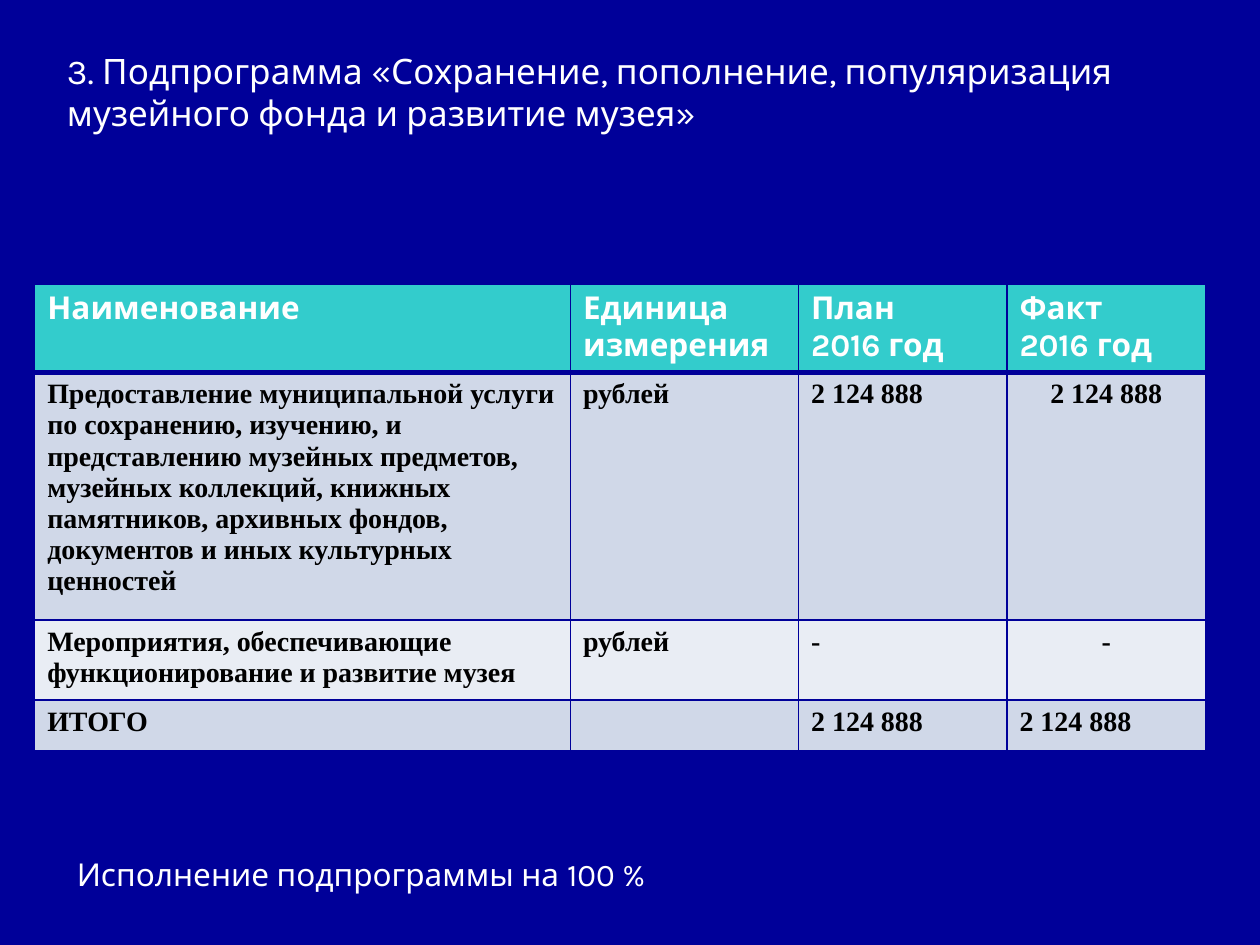
from lxml.etree import SubElement
from pptx import Presentation
from pptx.dml.color import RGBColor
from pptx.enum.text import MSO_ANCHOR, PP_ALIGN
from pptx.oxml.ns import qn
from pptx.util import Cm, Pt

NAVY = RGBColor(0x00, 0x00, 0x99)
TURQUOISE = RGBColor(0x33, 0xCC, 0xCC)
BAND_DARK = RGBColor(0xD0, 0xD8, 0xE8)
BAND_LIGHT = RGBColor(0xE9, 0xED, 0xF4)
WHITE = RGBColor(0xFF, 0xFF, 0xFF)
BLACK = RGBColor(0x00, 0x00, 0x00)

HEADINGS = ["Наименование", "Единица измерения", "План\n2016 год", "Факт\n2016 год"]
EXPENSES = [
    ["Предоставление муниципальной услуги по сохранению, изучению, и "
     "представлению музейных предметов, музейных коллекций, книжных памятников, "
     "архивных фондов, документов и иных культурных ценностей",
     "рублей", "2 124 888", "2 124 888"],
    ["Мероприятия, обеспечивающие функционирование и развитие музея",
     "рублей", "-", "-"],
    ["ИТОГО", "", "2 124 888", "2 124 888"],
]
COLUMN_WIDTHS = [10.8, 4.6, 4.2, 4]
ROW_HEIGHTS = [1.7, 4.65, 1.5, 0.88]


def write(frame, text, size=18, font="Karla", color=WHITE, bold=False,
          align=PP_ALIGN.LEFT):
    """Fill a text frame, one paragraph for each line of text."""
    frame.word_wrap = True
    for index, line in enumerate(text.split("\n")):
        paragraph = frame.add_paragraph() if index else frame.paragraphs[0]
        paragraph.alignment = align
        run = paragraph.add_run()
        run.text = line
        run.font.size, run.font.name, run.font.bold = Pt(size), font, bold
        run.font.color.rgb = color


class SlideBuilder:
    heading_style = dict(bold=True)
    body_style = dict(size=16, font="Times New Roman", color=BLACK, bold=True)

    def __init__(self, slide):
        self.slide = slide

    def background(self, color):
        fill = self.slide.background.fill
        fill.solid()
        fill.fore_color.rgb = color

    def text(self, left, top, width, height, text, anchor=MSO_ANCHOR.TOP, **style):
        box = self.slide.shapes.add_textbox(Cm(left), Cm(top), Cm(width), Cm(height))
        box.text_frame.vertical_anchor = anchor
        write(box.text_frame, text, **style)

    def cell(self, cell, text, fill, top_line, bottom_line, **style):
        write(cell.text_frame, text, **style)
        properties = cell._tc.get_or_add_tcPr()
        # Borders come before the fill in the cell properties
        for side, points in (("L", 1), ("R", 1), ("T", top_line), ("B", bottom_line)):
            line = SubElement(properties, qn(f"a:ln{side}"), w=str(Pt(points)))
            solid = SubElement(line, qn("a:solidFill"))
            SubElement(solid, qn("a:srgbClr"), val=str(NAVY))
        cell.fill.solid()
        cell.fill.fore_color.rgb = fill

    def table(self, left, top, headings, records, widths, heights):
        table = self.slide.shapes.add_table(
            len(heights), len(widths), Cm(left), Cm(top),
            Cm(sum(widths)), Cm(sum(heights))).table
        for column, width in zip(table.columns, widths):
            column.width = Cm(width)
        for row, height in zip(table.rows, heights):
            row.height = Cm(height)

        # Header row with a thick rule below
        for column, heading in enumerate(headings):
            self.cell(table.cell(0, column), heading, TURQUOISE, 1, 3,
                      **self.heading_style)

        # Banded rows; actual figures are centred except in the total
        for row, record in enumerate(records, start=1):
            band = BAND_DARK if row % 2 else BAND_LIGHT
            for column, value in enumerate(record):
                centred = column == len(widths) - 1 and row < len(records)
                self.cell(table.cell(row, column), value, band,
                          3 if row == 1 else 1, 1,
                          align=PP_ALIGN.CENTER if centred else PP_ALIGN.LEFT,
                          **self.body_style)


def main():
    presentation = Presentation()
    presentation.slide_width, presentation.slide_height = Cm(25.4), Cm(19.05)
    builder = SlideBuilder(presentation.slides.add_slide(presentation.slide_layouts[6]))
    builder.background(NAVY)

    # Title
    builder.text(1.1, 0.55, 22.86, 2.6,
                 "3. Подпрограмма «Сохранение, пополнение, популяризация "
                 "музейного фонда и развитие музея»",
                 anchor=MSO_ANCHOR.MIDDLE, size=20)

    # Budget table
    builder.table(0.7, 5.73, HEADINGS, EXPENSES, COLUMN_WIDTHS, ROW_HEIGHTS)

    # Conclusion
    builder.text(1.3, 17.12, 22, 1.02, "Исполнение подпрограммы на 100 %")

    presentation.save("out.pptx")


if __name__ == "__main__":
    main()
